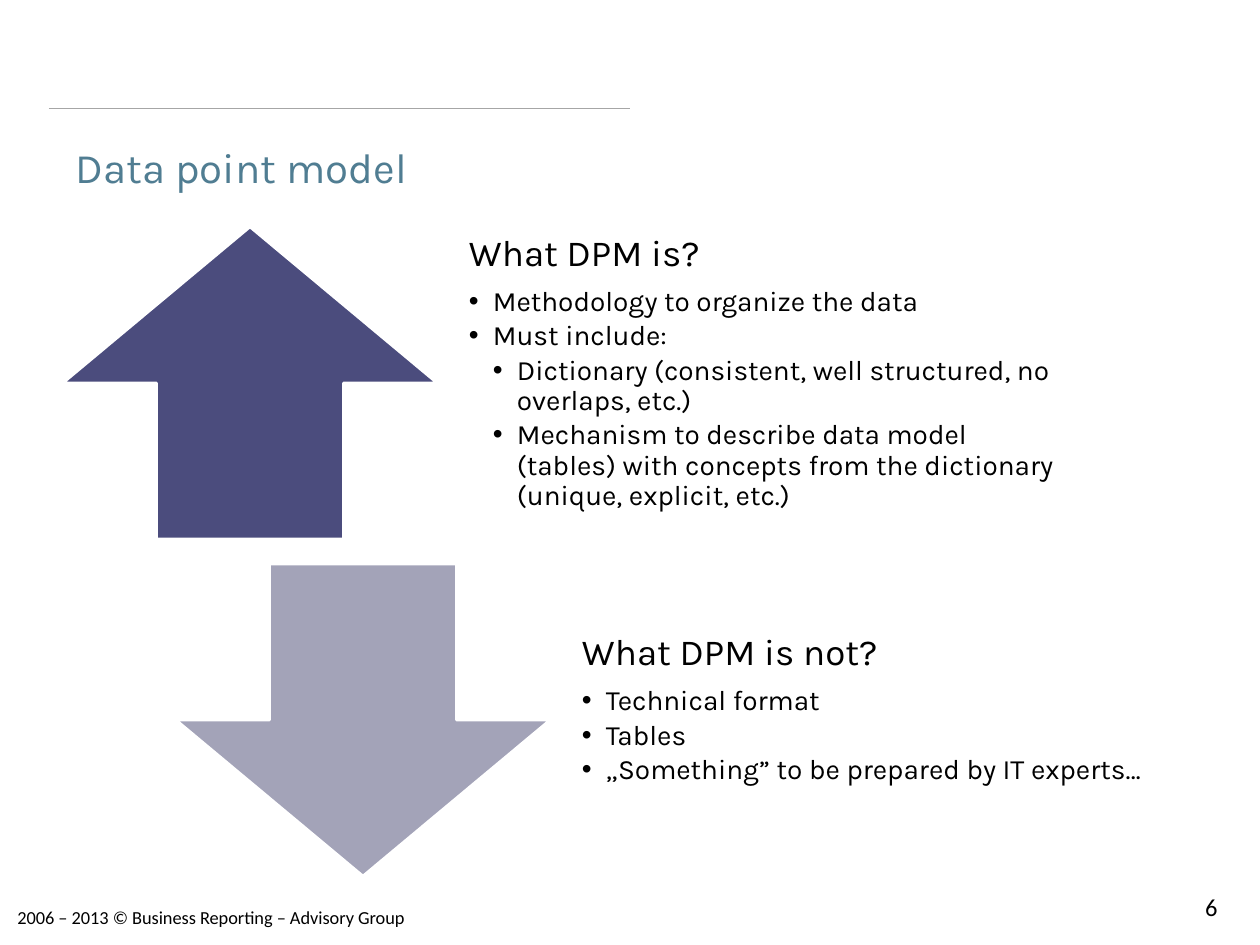
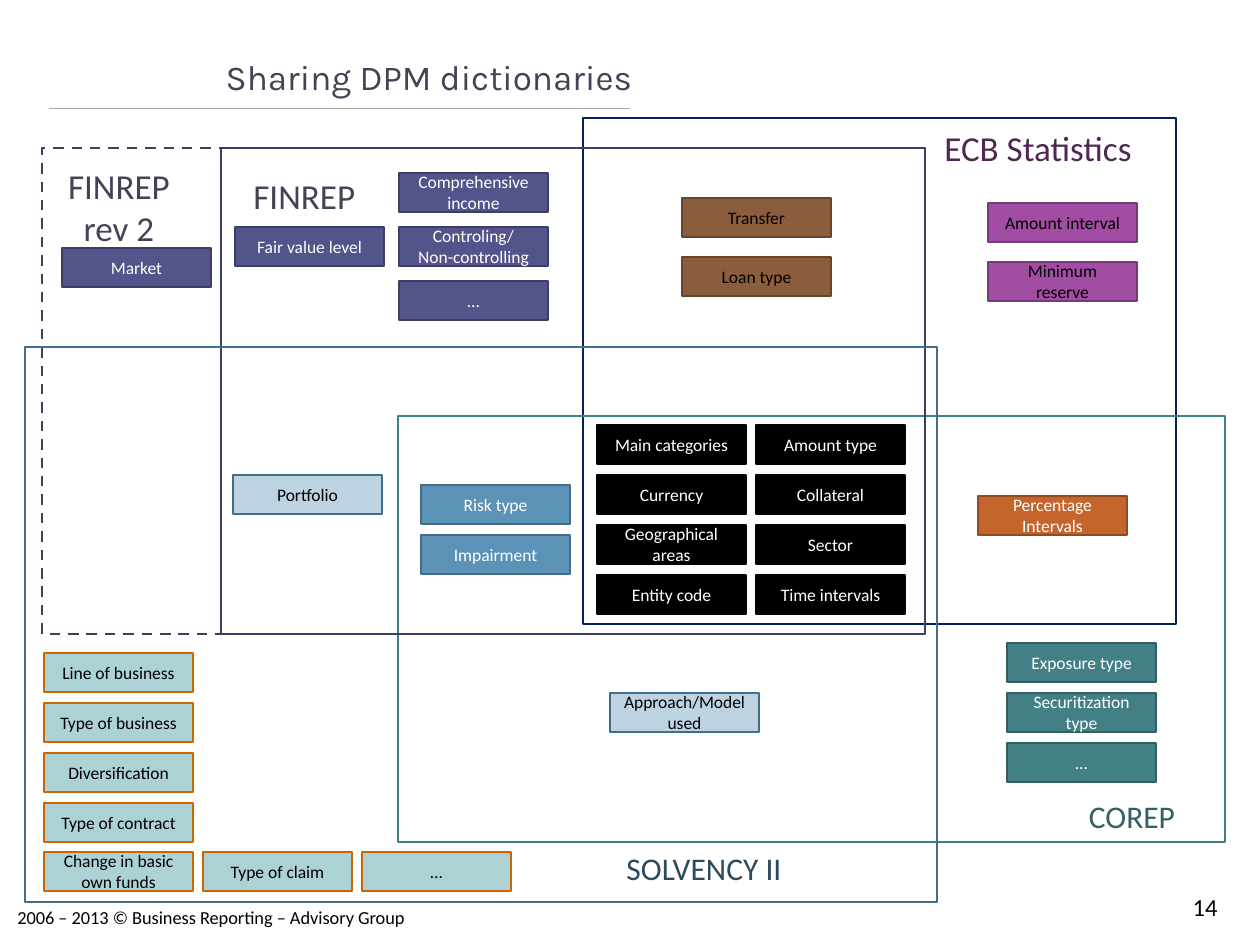
"""Build two slides on the data point model and its shared dictionaries."""
from dataclasses import dataclass

from lxml.etree import SubElement
from pptx import Presentation
from pptx.dml.color import RGBColor
from pptx.enum.dml import MSO_LINE
from pptx.enum.shapes import MSO_CONNECTOR, MSO_SHAPE
from pptx.enum.text import MSO_ANCHOR, MSO_AUTO_SIZE, PP_ALIGN
from pptx.oxml.ns import qn
from pptx.util import Emu, Pt

PX_PER_INCH = 126
HEADING_FONT = "Karla"
LABEL_FONT = "Calibri"
BLACK = "000000"
WHITE = "FFFFFF"
SLATE = "424456"
INDIGO = "3D3E66"
STEEL = "406F8D"
CHIP_WIDTH, CHIP_HEIGHT = 149, 39
COLUMN_STEP, ROW_STEP = 159, 50
INDENT = 24


@dataclass(frozen=True)
class Box:
    """Place of an element in px."""
    left: int
    top: int
    width: int
    height: int

    def emu(self) -> list[Emu]:
        """Return the four lengths in EMU."""
        return [px(n) for n in (self.left, self.top, self.width, self.height)]


@dataclass(frozen=True)
class Point:
    """One paragraph of an argument; level 0 is its heading."""
    text: str
    level: int = 1


@dataclass(frozen=True)
class Argument:
    """An arrow with the points beside it."""
    arrow: MSO_SHAPE
    color: str
    arrow_box: Box
    points_box: Box
    points: tuple[Point, ...]


@dataclass(frozen=True)
class Palette:
    """Colours of a family of chips."""
    fill: str
    line: str
    text: str


@dataclass(frozen=True)
class Framework:
    """Outline of a reporting framework with its caption."""
    outline: Box
    line: str
    caption: str
    caption_box: Box
    caption_color: str
    size: int = 20
    align: PP_ALIGN = PP_ALIGN.CENTER
    dashed: bool = False


@dataclass(frozen=True)
class ChipSeries:
    """Equal chips set out from a first place by a constant step."""
    left: int
    top: int
    palette: Palette
    labels: tuple[str, ...]
    step_x: int = 0
    step_y: int = ROW_STEP


FINREP = Palette("53548A", INDIGO, WHITE)
SHARED = Palette("BED3E1", STEEL, BLACK)
RISK = Palette("5C92B5", "446C86", WHITE)
CORE = Palette(BLACK, BLACK, WHITE)
LENDING = Palette("8B5D3D", "67452D", BLACK)
ECB = Palette("A04DA3", "763979", BLACK)
PERCENTAGE = Palette("C4652D", "914B21", WHITE)
COREP = Palette("438086", "325F63", WHITE)
SOLVENCY = Palette("ADD2D6", "CC6600", BLACK)

ARGUMENTS = (
    Argument(MSO_SHAPE.UP_ARROW, "4B4C7D", Box(63, 227, 374, 312), Box(449, 227, 635, 312), (
        Point("What DPM is?", 0),
        Point("Methodology to organize the data"),
        Point("Must include:"),
        Point("Dictionary (consistent, well structured, no overlaps, etc.)", 2),
        Point("Mechanism to describe data model (tables) with concepts from "
              "the dictionary (unique, explicit, etc.)", 2),
    )),
    Argument(MSO_SHAPE.DOWN_ARROW, "A3A3B8", Box(176, 564, 374, 312), Box(562, 564, 635, 312), (
        Point("What DPM is not?", 0),
        Point("Technical format"),
        Point("Tables"),
        Point("„Something” to be prepared by IT experts…"),
    )),
)

FRAMEWORKS = (
    Framework(Box(583, 118, 593, 506), "002060", "ECB Statistics",
              Box(932, 120, 243, 55), "502652", align=PP_ALIGN.LEFT),
    Framework(Box(398, 416, 827, 426), COREP.fill, "COREP",
              Box(1052, 791, 160, 50), "326065", size=18),
    Framework(Box(221, 148, 704, 486), INDIGO, "FINREP",
              Box(241, 168, 134, 55), SLATE, align=PP_ALIGN.LEFT),
    Framework(Box(42, 148, 883, 486), INDIGO, "FINREP\nrev 2",
              Box(52, 158, 134, 97), SLATE, dashed=True),
    Framework(Box(25, 347, 912, 555), STEEL, "SOLVENCY II",
              Box(600, 843, 208, 50), "2B4A5E", size=18),
)

CHIPS = (
    ChipSeries(978, 496, PERCENTAGE, ("Percentage Intervals",)),
    ChipSeries(988, 203, ECB, ("Amount interval", "Minimum reserve"), step_y=59),
    ChipSeries(1007, 643, COREP, ("Exposure type", "Securitization type", "…")),
    ChipSeries(597, 425, CORE, ("Main categories", "Currency", "Geographical areas",
                                "Entity code")),
    ChipSeries(597 + COLUMN_STEP, 425, CORE, ("Amount type", "Collateral", "Sector",
                                              "Time intervals")),
    ChipSeries(421, 485, RISK, ("Risk type", "Impairment")),
    ChipSeries(682, 198, LENDING, ("Transfer", "Loan type"), step_y=59),
    ChipSeries(399, 173, FINREP, ("Comprehensive income", "Controling/\nNon-controlling", "…"),
               step_y=54),
    ChipSeries(235, 227, FINREP, ("Fair value level",)),
    ChipSeries(62, 248, FINREP, ("Market",)),
    ChipSeries(233, 475, SHARED, ("Portfolio",)),
    ChipSeries(610, 693, SHARED, ("Approach/Model used",)),
    ChipSeries(44, 653, SOLVENCY, ("Line of business", "Type of business",
                                   "Diversification", "Type of contract")),
    ChipSeries(44, 852, SOLVENCY, ("Change in basic own funds", "Type of claim", "…"),
               step_x=COLUMN_STEP, step_y=0),
)


def px(length: int) -> Emu:
    """Turn px into EMU."""
    return Emu(round(length * 914400 / PX_PER_INCH))


def rgb(color: str) -> RGBColor:
    """Turn a hex string into a colour."""
    return RGBColor.from_string(color)


def write_paragraph(paragraph, text: str, *, size: float, color: str = BLACK,
                    font: str = LABEL_FONT, align: PP_ALIGN = PP_ALIGN.LEFT) -> None:
    """Write one formatted run into a paragraph."""
    paragraph.alignment = align
    run = paragraph.add_run()
    run.text = text
    run.font.size = Pt(size)
    run.font.name = font
    run.font.color.rgb = rgb(color)


def write(frame, text: str, *, anchor: MSO_ANCHOR = MSO_ANCHOR.TOP,
          wrap: bool = True, **text_format) -> None:
    """Fill a text frame, one paragraph for each line."""
    frame.word_wrap = wrap
    frame.auto_size = MSO_AUTO_SIZE.NONE
    frame.vertical_anchor = anchor
    for index, line in enumerate(text.split("\n")):
        paragraph = frame.add_paragraph() if index else frame.paragraphs[0]
        write_paragraph(paragraph, line, **text_format)


def add_text(slide, box: Box, text: str, **text_format) -> None:
    """Add a text box."""
    write(slide.shapes.add_textbox(*box.emu()).text_frame, text, **text_format)


def add_panel(slide, kind: MSO_SHAPE, box: Box, line: str, fill: str | None = None):
    """Add a preset shape with a thin outline and an optional fill."""
    panel = slide.shapes.add_shape(kind, *box.emu())
    panel.shadow.inherit = False
    panel.line.color.rgb = rgb(line)
    panel.line.width = Pt(1.5)
    if fill is None:
        panel.fill.background()
    else:
        panel.fill.solid()
        panel.fill.fore_color.rgb = rgb(fill)
    return panel


def start_slide(deck, title: str, title_box: Box, number: int, *, size: int, color: str):
    """Add a slide with its title, header rule, footer and number."""
    slide = deck.slides.add_slide(deck.slide_layouts[5])
    heading = slide.shapes.title
    heading.left, heading.top, heading.width, heading.height = title_box.emu()
    write(heading.text_frame, title, anchor=MSO_ANCHOR.MIDDLE,
          size=size, color=color, font=HEADING_FONT)
    rule = slide.shapes.add_connector(MSO_CONNECTOR.STRAIGHT, px(49), px(108), px(630), px(108))
    rule.line.color.rgb = rgb("A6A6A6")
    rule.line.width = Pt(0.25)
    SubElement(rule._element.spPr, qn("a:effectLst"))
    add_text(slide, Box(5, 900, 417, 35), "2006 – 2013 © Business Reporting – Advisory Group",
             size=10.5, wrap=False)
    add_text(slide, Box(1125, 886, 105, 39), str(number), size=14, align=PP_ALIGN.RIGHT)
    return slide


def add_bullet(paragraph, level: int) -> None:
    """Give a paragraph a hanging bullet."""
    properties = paragraph._p.get_or_add_pPr()
    properties.set("marL", str(px(INDENT * level)))
    properties.set("indent", str(-px(INDENT)))
    SubElement(properties, qn("a:buFont")).set("typeface", "Arial")
    SubElement(properties, qn("a:buChar")).set("char", "•")


def add_argument(slide, argument: Argument) -> None:
    """Draw an arrow and list its points."""
    add_panel(slide, argument.arrow, argument.arrow_box, WHITE, argument.color)
    frame = slide.shapes.add_textbox(*argument.points_box.emu()).text_frame
    frame.word_wrap = True
    frame.vertical_anchor = MSO_ANCHOR.MIDDLE
    frame.margin_left = frame.margin_right = frame.margin_bottom = px(20)
    frame.margin_top = 0
    for index, point in enumerate(argument.points):
        paragraph = frame.add_paragraph() if index else frame.paragraphs[0]
        if point.level:
            add_bullet(paragraph, point.level)
        paragraph.level = point.level
        paragraph.line_spacing = 0.9
        paragraph.space_after = Pt(2.4 if point.level else 7.4)
        write_paragraph(paragraph, point.text, size=16 if point.level else 21,
                        font=HEADING_FONT)


def add_framework(slide, framework: Framework) -> None:
    """Draw a framework outline and its caption."""
    outline = add_panel(slide, MSO_SHAPE.RECTANGLE, framework.outline, framework.line)
    if framework.dashed:
        outline.line.dash_style = MSO_LINE.DASH
    add_text(slide, framework.caption_box, framework.caption, size=framework.size,
             color=framework.caption_color, align=framework.align)


def add_chips(slide, series: ChipSeries) -> None:
    """Draw a series of labelled chips."""
    for index, label in enumerate(series.labels):
        box = Box(series.left + index * series.step_x, series.top + index * series.step_y,
                  CHIP_WIDTH, CHIP_HEIGHT)
        chip = add_panel(slide, MSO_SHAPE.RECTANGLE, box, series.palette.line,
                         series.palette.fill)
        write(chip.text_frame, label, anchor=MSO_ANCHOR.MIDDLE, size=10,
              color=series.palette.text, align=PP_ALIGN.CENTER)


def main() -> None:
    """Build and save the deck."""
    deck = Presentation()
    deck.slide_width, deck.slide_height = px(1260), px(945)
    model = start_slide(deck, "Data point model", Box(63, 108, 1134, 118), 6,
                        size=24, color="507D92")
    for argument in ARGUMENTS:
        add_argument(model, argument)
    sharing = start_slide(deck, "Sharing DPM dictionaries", Box(213, 18, 446, 117), 14,
                          size=20, color=SLATE)
    for framework in FRAMEWORKS:
        add_framework(sharing, framework)
    for series in CHIPS:
        add_chips(sharing, series)
    deck.save("out.pptx")


if __name__ == "__main__":
    main()
